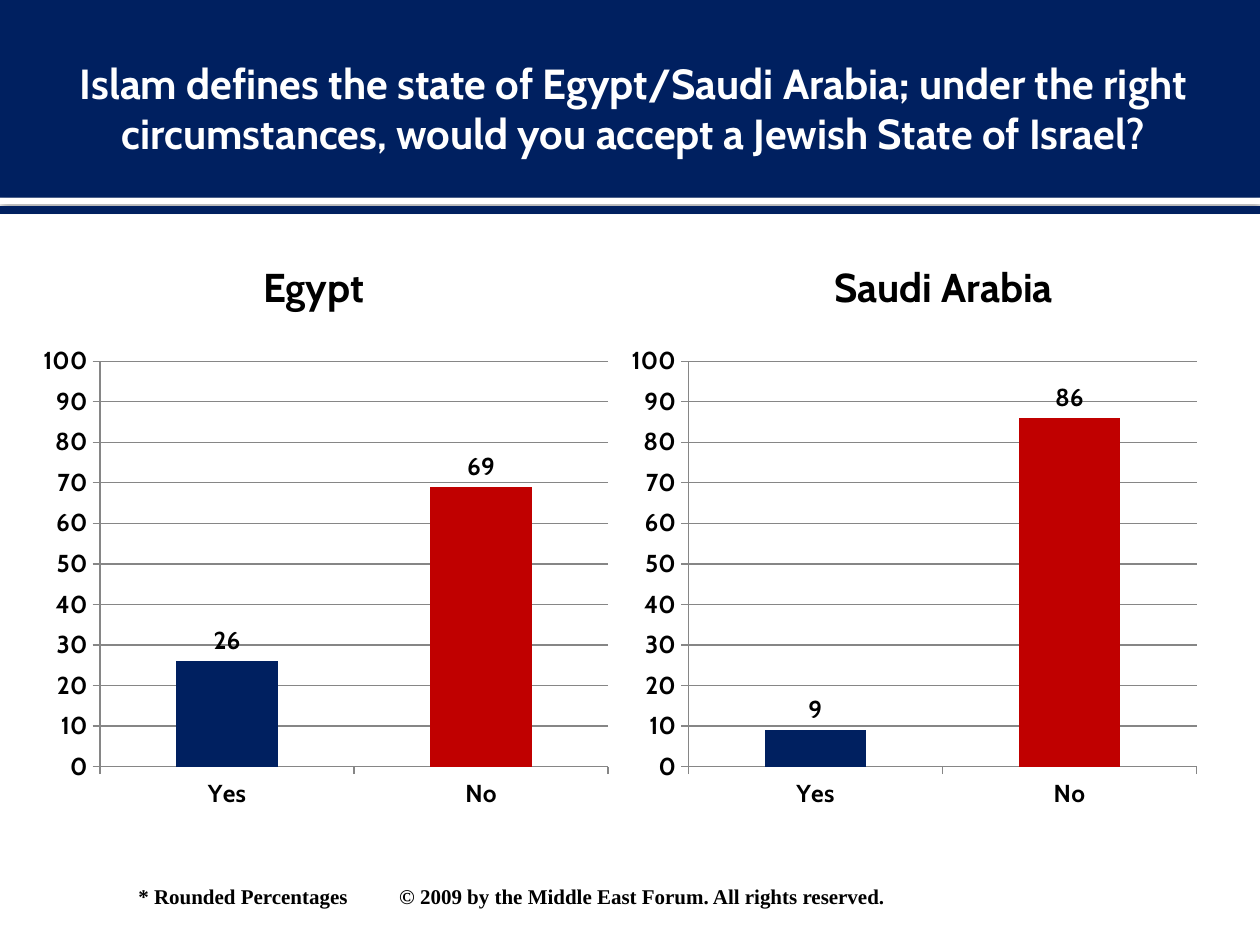
from lxml import etree
from pptx import Presentation
from pptx.chart.data import CategoryChartData
from pptx.dml.color import RGBColor
from pptx.enum.chart import XL_CHART_TYPE, XL_LABEL_POSITION, XL_TICK_MARK
from pptx.enum.shapes import MSO_CONNECTOR, MSO_SHAPE
from pptx.enum.text import MSO_ANCHOR, PP_ALIGN
from pptx.oxml import parse_xml
from pptx.oxml.ns import nsdecls, qn
from pptx.util import Inches, Pt

COLUMN = XL_CHART_TYPE.COLUMN_CLUSTERED
OUT_END = XL_LABEL_POSITION.OUTSIDE_END
TICK = XL_TICK_MARK.OUTSIDE
STRAIGHT = MSO_CONNECTOR.STRAIGHT
RECT = MSO_SHAPE.RECTANGLE
MIDDLE, TOP = MSO_ANCHOR.MIDDLE, MSO_ANCHOR.TOP
CENTER, LEFT = PP_ALIGN.CENTER, PP_ALIGN.LEFT

NAVY = RGBColor(0x00, 0x20, 0x60)
RED = RGBColor(0xC0, 0x00, 0x00)
GREY = RGBColor(0x86, 0x86, 0x86)
BLACK = RGBColor(0, 0, 0)
WHITE = RGBColor(0xFF, 0xFF, 0xFF)
SANS, SERIF = "Cabin", "Times New Roman"

WIDE, HIGH = Inches(10), Inches(7.5)
TITLE = ("Islam defines the state of Egypt/Saudi Arabia; under the right "
         "circumstances, would you accept a Jewish State of Israel?")
NOTE = ("* Rounded Percentages\t"
        "© 2009 by the Middle East Forum. All rights reserved.")
ANSWERS = ("Yes", "No")
POLLS = (("Egypt", (26, 69), 0.25, 0.25),
         ("Saudi Arabia", (9, 86), 5.25, 4.92))
SHADE = (f'<a:effectLst {nsdecls("a")}><a:outerShdw blurRad="63500" '
         'dist="10160" dir="5400000"><a:srgbClr val="000000">'
         '<a:alpha val="60000"/></a:srgbClr></a:outerShdw></a:effectLst>')


def set_font(font, name, size, color):
    """Give a font its face, size and colour, in bold."""
    font.name, font.size, font.bold = name, Pt(size), True
    font.color.rgb = color


def set_text(shape, words, face, size, color, align, anchor, pads):
    """Fill a shape with one bold run and return its paragraph."""
    frame = shape.text_frame
    frame.word_wrap, frame.vertical_anchor = True, anchor
    (frame.margin_left, frame.margin_top,
     frame.margin_right, frame.margin_bottom) = map(Inches, pads)
    para = frame.paragraphs[0]
    para.alignment = align
    run = para.add_run()
    run.text = words
    set_font(run.font, face, size, color)
    return para


def add_bar(slide, box, color):
    """Add a plain filled bar."""
    bar = slide.shapes.add_shape(RECT, *box)
    bar.shadow.inherit = False
    bar.fill.solid()
    bar.fill.fore_color.rgb = color
    bar.line.fill.background()
    return bar


def add_head(slide, left, top, width, height):
    """Place the banner, its rule and the title in the given box."""
    foot = top + height
    strip = add_bar(slide, (left, foot, width, Inches(0.05)), WHITE)
    props = strip._element.spPr
    props.remove(props.find(qn("a:effectLst")))
    props.append(parse_xml(SHADE))
    add_bar(slide, (left, top, width, height), NAVY)
    level = foot + Inches(0.1)
    rule = slide.shapes.add_connector(STRAIGHT, left, level,
                                      left + width, level)
    rule.line.color.rgb, rule.line.width = NAVY, Pt(4.5)
    etree.SubElement(rule._element.spPr, qn("a:effectLst"))
    title = slide.shapes.title
    title.left, title.width = left, width
    title.top, title.height = top + Inches(0.17), Inches(1.37)
    set_text(title, TITLE, SANS, 24, WHITE, CENTER, MIDDLE,
             (0.1, 0.05, 0.05, 0.05))
    slide.shapes._spTree.append(title._element)


def add_label(slide, words, left, top, width, height):
    """Place a country name above its chart."""
    box = slide.shapes.add_textbox(left, top, width, height)
    set_text(box, words, SANS, 23, BLACK, CENTER, MIDDLE,
             (0.16, 0.1, 0.1, 0.05))


def add_poll(slide, votes, left, top, width, height):
    """Place a column chart of the answers in the given box."""
    data = CategoryChartData()
    data.categories = ANSWERS
    data.add_series("Series 1", votes)
    chart = slide.shapes.add_chart(COLUMN, left, top, width, height,
                                   data).chart
    chart.has_legend = chart.has_title = False
    set_font(chart.font, SANS, 14, BLACK)
    scale = chart.value_axis
    scale.minimum_scale, scale.maximum_scale = 0, 100
    scale.major_unit = 10
    scale.has_major_gridlines = True
    scale.major_gridlines.format.line.color.rgb = GREY
    for axis in (scale, chart.category_axis):
        axis.major_tick_mark = TICK
        axis.format.line.color.rgb = GREY
    plot = chart.plots[0]
    plot.gap_width, plot.vary_by_categories = 150, False
    plot.has_data_labels = True
    plot.data_labels.show_value = True
    plot.data_labels.position = OUT_END
    series = plot.series[0]
    for part, color in ((series, NAVY), (series.points[1], RED)):
        part.format.fill.solid()
        part.format.fill.fore_color.rgb = color


def add_note(slide, left, top, width, height):
    """Place the footnote, with a tab before the rights line."""
    box = slide.shapes.add_textbox(left, top, width, height)
    para = set_text(box, NOTE, SERIF, 12, BLACK, LEFT, TOP,
                    (0.1, 0.05, 0.1, 0.05))
    tabs = etree.SubElement(para._p.get_or_add_pPr(), qn("a:tabLst"))
    etree.SubElement(tabs, qn("a:tab"), pos=str(Inches(2.07)), algn="l")


def main():
    """Build the slide and save it."""
    deck = Presentation()
    deck.slide_width, deck.slide_height = WIDE, HIGH
    slide = deck.slides.add_slide(deck.slide_layouts[5])
    add_head(slide, 0, 0, WIDE, Inches(1.57))
    for name, votes, label, chart in POLLS:
        add_label(slide, name, *map(Inches, (label, 1.86, 4.42, 0.78)))
        add_poll(slide, votes, *map(Inches, (chart, 2.67, 4.67, 3.83)))
    add_note(slide, *map(Inches, (1, 6.96, 6.2, 0.3)))
    deck.save("out.pptx")


if __name__ == "__main__":
    main()
